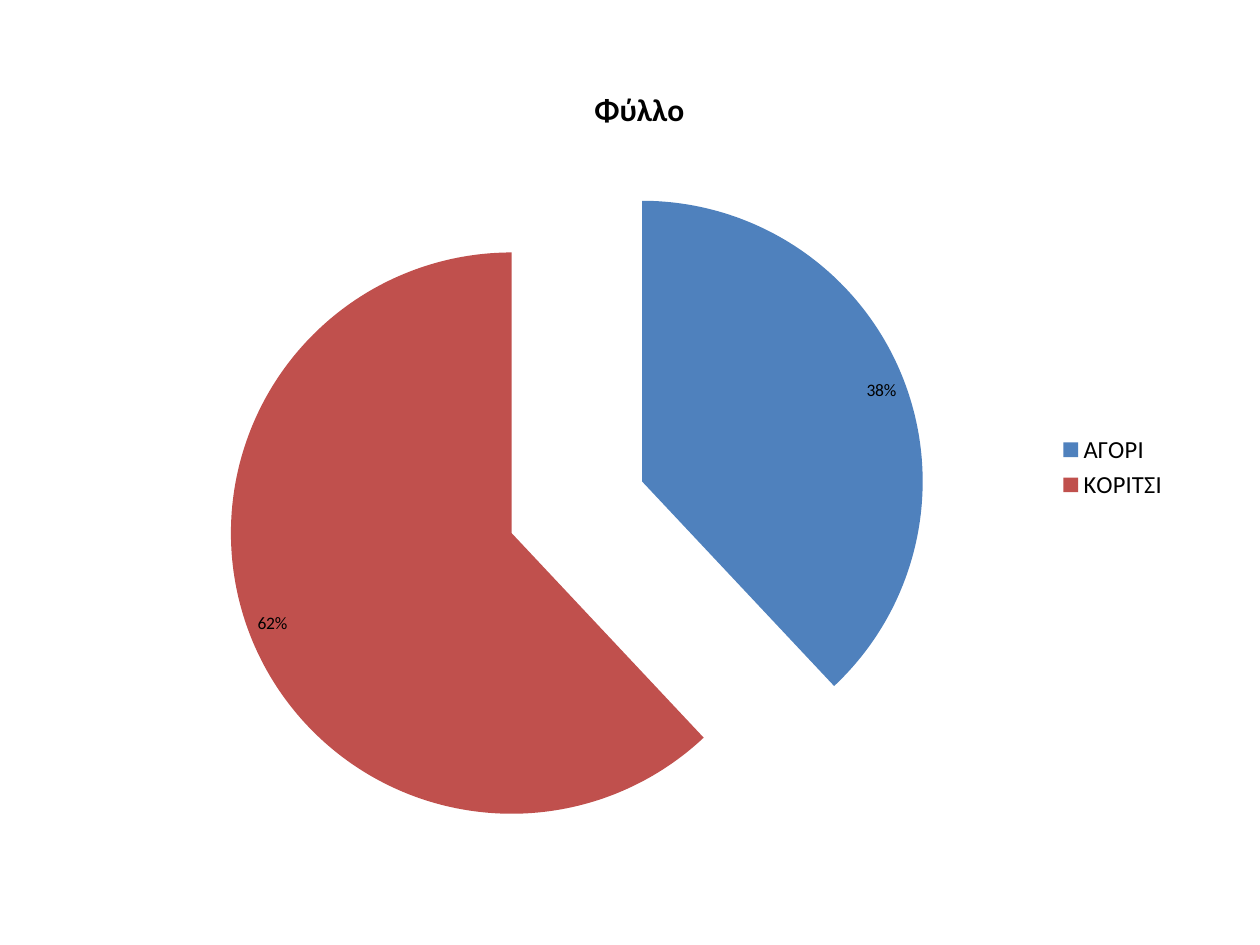
from pptx import Presentation
from pptx import util as u
from pptx.chart.data import CategoryChartData
from pptx.dml.color import RGBColor
from pptx.enum import chart as ch
from pptx.oxml import parse_xml
from pptx.oxml.ns import nsdecls

TITLE = "Φύλλο"
SLICES = [("ΑΓΟΡΙ", 38, "4F81BD"), ("ΚΟΡΙΤΣΙ", 62, "C0504D")]
EXPLOSION = 25  # percent of the radius
FONT, BLACK = "Calibri", "000000"


def style(font, size, bold=False):
    font.name, font.size, font.bold = FONT, u.Pt(size), bold
    font.color.rgb = RGBColor.from_string(BLACK)


prs = Presentation()
prs.slide_width, prs.slide_height = u.Cm(25.4), u.Cm(19.05)
s = prs.slides.add_slide(prs.slide_layouts[6])

data = CategoryChartData()
data.categories = [name for name, _, _ in SLICES]
data.add_series("Series 1", [value for _, value, _ in SLICES])
chart = s.shapes.add_chart(ch.XL_CHART_TYPE.PIE, u.Cm(1.98), u.Cm(1.19),
                           u.Cm(21.82), u.Cm(16.46), data).chart
style(chart.font, 10)

chart.has_title = True
p = chart.chart_title.text_frame.paragraphs[0]
p.text = TITLE
style(p.runs[0].font, 18, bold=True)
chart.chart_title.include_in_layout = False

chart.has_legend = True
chart.legend.position = ch.XL_LEGEND_POSITION.RIGHT
chart.legend.include_in_layout = False
style(chart.legend.font, 14)

plot = chart.plots[0]
plot.vary_by_categories = True
series = plot.series[0]
for i, (_, _, color) in enumerate(SLICES):
    fill = series.points[i].format.fill
    fill.solid()
    fill.fore_color.rgb = RGBColor.from_string(color)

# The schema wants the explosion ahead of the data points
series._element.find("{*}dPt").addprevious(
    parse_xml(f'<c:explosion {nsdecls("c")} val="{EXPLOSION}"/>'))

labels = series.data_labels
labels.show_percentage = True
labels.show_value = False
labels.number_format, labels.number_format_is_linked = "0%", False
labels.position = ch.XL_LABEL_POSITION.INSIDE_END
style(labels.font, 10)

prs.save("out.pptx")
